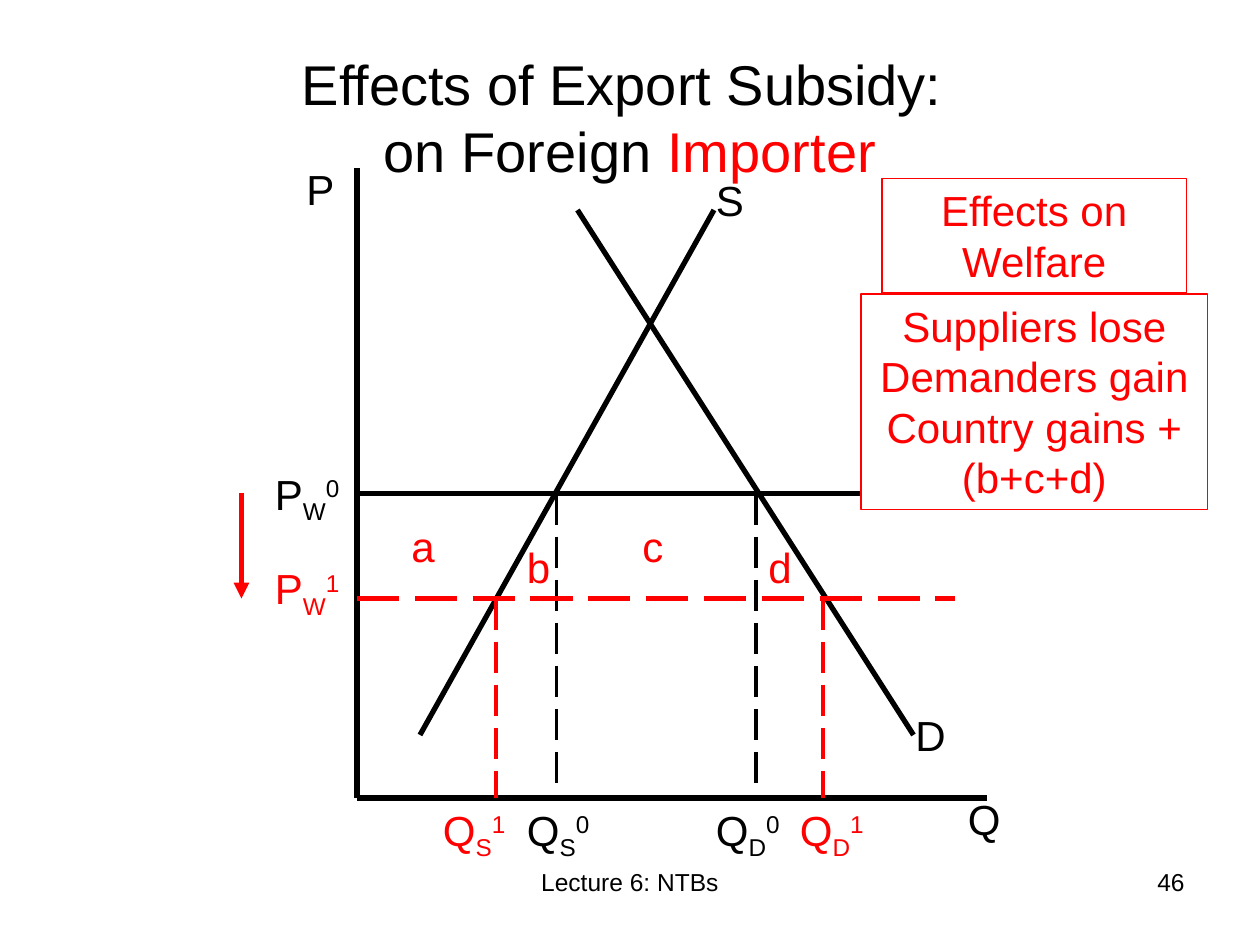
import pptx
import pptx.util
import pptx.dml.color
import pptx.enum.dml
import pptx.enum.shapes
import pptx.enum.text
import pptx.oxml.ns
import lxml.etree

BLACK = pptx.dml.color.RGBColor(0, 0, 0)
RED = pptx.dml.color.RGBColor(255, 0, 0)
WHITE = pptx.dml.color.RGBColor(255, 255, 255)
ALIGN = pptx.enum.text.PP_ALIGN
ANCHOR = pptx.enum.text.MSO_ANCHOR
LEFT, TOP, BASE = 34, 16, 76
HIGH, LOW, END = 47, 57, 91


def grid(*cells):
    return [pptx.util.Inches(cell / 12) for cell in cells]


def style(run, color, size):
    run.font.name = "Arial"
    run.font.size = pptx.util.Pt(size)
    run.font.color.rgb = color


def write(shape, text, color, size, align):
    frame = shape.text_frame
    frame.word_wrap = True
    frame.vertical_anchor = ANCHOR.TOP
    para = frame.paragraphs[0]
    para.text = text
    para.alignment = align
    for run in para.runs:
        style(run, color, size)


def label(slide, box, text, color=BLACK, size=24, align=ALIGN.LEFT):
    shape = slide.shapes.add_textbox(*grid(*box))
    write(shape, text, color, size, align)
    return shape


def symbol(slide, col, row, text, sub, sup, color):
    para = label(slide, (col, row, 10, 6), text, color).text_frame.paragraphs[0]
    for mark, shift in ((sub, -25), (sup, 30)):
        run = para.add_run()
        run.text = mark
        style(run, color, 24)
        run.font._element.set("baseline", str(shift * 1000))


def line(slide, ends, color=BLACK, width=3, dash=False, arrow=False):
    kind = pptx.enum.shapes.MSO_CONNECTOR.STRAIGHT
    item = slide.shapes.add_connector(kind, *grid(*ends))
    item.line.color.rgb = color
    item.line.width = pptx.util.Pt(width)
    if dash:
        item.line.dash_style = pptx.enum.dml.MSO_LINE.LONG_DASH
    shape = item._element.spPr
    if arrow:
        stroke = shape.find(pptx.oxml.ns.qn("a:ln"))
        lxml.etree.SubElement(stroke, pptx.oxml.ns.qn("a:tailEnd"), type="triangle")
    lxml.etree.SubElement(shape, pptx.oxml.ns.qn("a:effectLst"))


def panel(slide, box, text, fill=None):
    kind = pptx.enum.shapes.MSO_SHAPE.RECTANGLE
    shape = slide.shapes.add_shape(kind, *grid(*box))
    shape.shadow.inherit = False
    if fill is None:
        shape.fill.background()
    else:
        shape.fill.solid()
        shape.fill.fore_color.rgb = fill
    shape.line.color.rgb = RED
    shape.line.width = pptx.util.Pt(0.75)
    write(shape, text, RED, 24, ALIGN.CENTER)


def head(slide):
    title = label(slide, (6, 3.6, 108, 15),
                  "Effects of Export Subsidy: \von Foreign ", size=32, align=ALIGN.CENTER)
    title.text_frame.vertical_anchor = ANCHOR.MIDDLE
    run = title.text_frame.paragraphs[0].add_run()
    run.text = "Importer"
    style(run, RED, 32)


def curves(slide):
    for ends in ((LEFT, TOP, LEFT, BASE), (LEFT, BASE, 94, BASE),
                 (68, 20, 40, 70), (55, 20, 87, 70), (LEFT, HIGH, END, HIGH)):
        line(slide, ends)
    for col, row, color in ((47.25, LOW, RED), (78.4, LOW, RED),
                            (53, HIGH, BLACK), (72, HIGH, BLACK)):
        line(slide, (col, row, col, BASE), color, 2.25, dash=True)
    line(slide, (LEFT, LOW, END, LOW), RED, dash=True)
    line(slide, (23, HIGH, 23, LOW), RED, arrow=True)


def names(slide):
    for col, row, text in ((67, 16, "S"), (86, 67, "D"), (28, 15, "P"), (91, 75, "Q")):
        label(slide, (col, row, 7, 6), text)
    for col, row, text in ((38, 49, "a"), (49, 51, "b"), (60, 49, "c"), (72, 51, "d")):
        label(slide, (col, row, 7, 6), text, RED)
    for col, row, *parts in ((25, 44, "P", "W", "0", BLACK), (25, 53, "P", "W", "1", RED),
                             (49, 76, "Q", "S", "0", BLACK), (41, 76, "Q", "S", "1", RED),
                             (67, 76, "Q", "D", "0", BLACK), (75, 76, "Q", "D", "1", RED)):
        symbol(slide, col, row, *parts)


def main():
    deck = pptx.Presentation()
    deck.slide_width, deck.slide_height = grid(120, 90)
    slide = deck.slides.add_slide(deck.slide_layouts[6])
    label(slide, (41, 82, 38, 6.2), "Lecture 6: NTBs", size=14, align=ALIGN.CENTER)
    label(slide, (86, 82, 28, 6.2), "46", size=14, align=ALIGN.RIGHT)
    head(slide)
    curves(slide)
    names(slide)
    panel(slide, (84, 17, 29, 10.9), "Effects on Welfare")
    panel(slide, (82, 28, 33, 20.5),
          "Suppliers lose Demanders gain Country gains +(b+c+d)", WHITE)
    deck.save("out.pptx")


if __name__ == "__main__":
    main()
